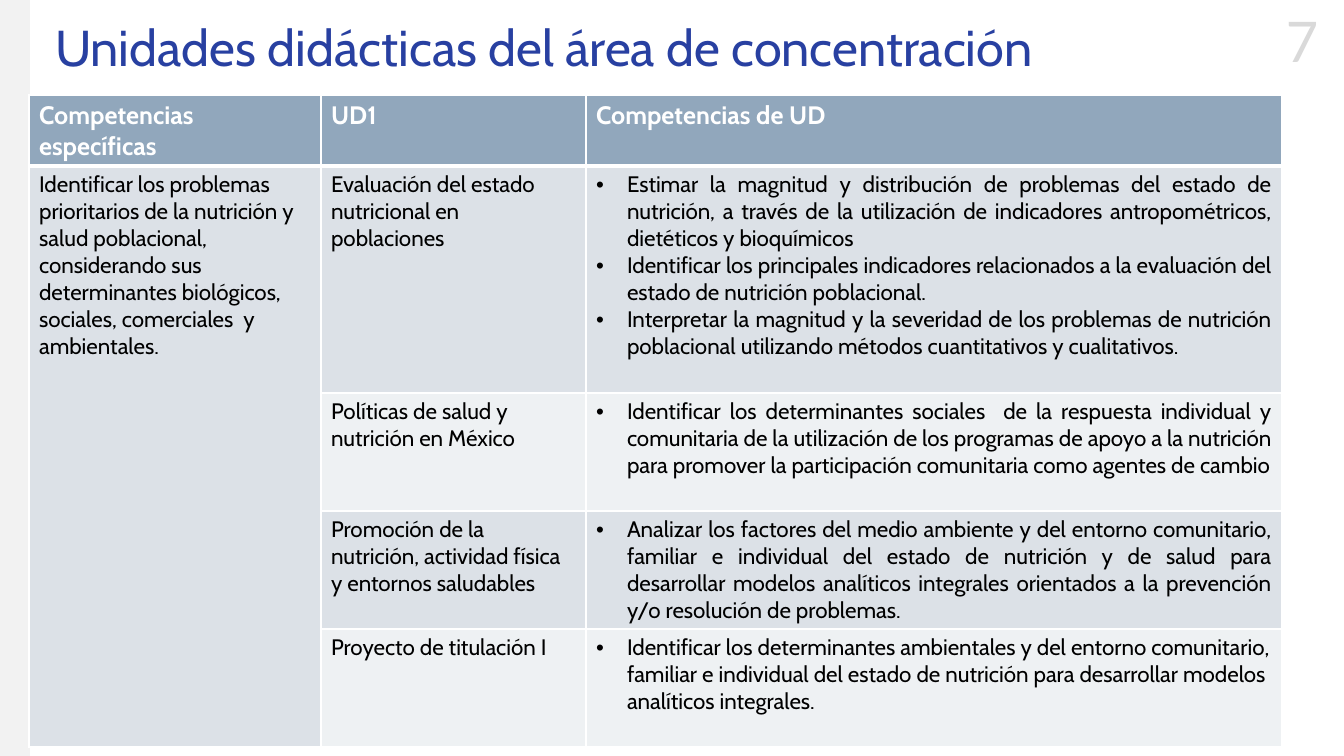
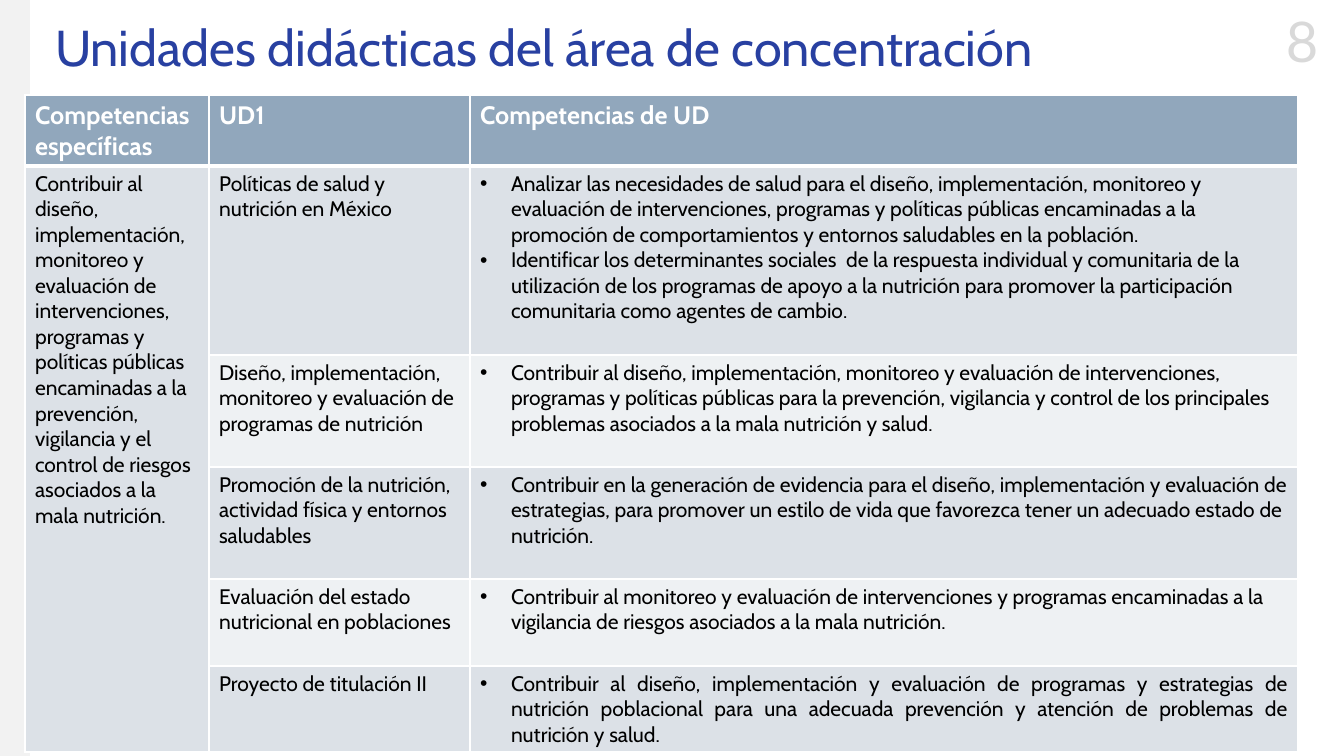
from lxml import etree
from pptx import Presentation
from pptx import util as u
from pptx.dml.color import RGBColor
from pptx.enum import shapes, text
from pptx.oxml.ns import qn

EMU_PER_PX = 12192000 / 1344
SLIDE_W, SLIDE_H = 1344, 756
COLORS = {
    "title": "2840A1", "number": "D9D9D9", "band": "F2F2F2",
    "header": "91A7BC", "odd": "DCE1E7", "even": "EEF1F3",
    "white": "FFFFFF", "ink": "000000",
}
TITLE = "Unidades didácticas del área de concentración"
HEADINGS = ["Competencias específicas", "UD1", "Competencias de UD"]
HEADER_H = 71
BULLET_INDENT = 31

# Each unit: row height, name, competencies, justified
UNIT_SLIDES = [
    dict(
        number=7, left=29, top=95, columns=[292, 265, 696], size=16,
        competence="Identificar los problemas prioritarios de la nutrición y salud "
                   "poblacional, considerando sus determinantes biológicos, sociales, "
                   "comerciales  y ambientales.",
        units=[
            (227, "Evaluación del estado nutricional en poblaciones", [
                "Estimar la magnitud y distribución de problemas del estado de nutrición, a "
                "través de la utilización de indicadores antropométricos, dietéticos y "
                "bioquímicos",
                "Identificar los principales indicadores relacionados a la evaluación del "
                "estado de nutrición poblacional.",
                "Interpretar la magnitud y la severidad de los problemas de nutrición "
                "poblacional utilizando métodos cuantitativos y cualitativos.",
            ], True),
            (118, "Políticas de salud y nutrición en México", [
                "Identificar los determinantes sociales  de la respuesta individual y "
                "comunitaria de la utilización de los programas de apoyo a la nutrición para "
                "promover la participación comunitaria como agentes de cambio",
            ], True),
            (118, "Promoción de la nutrición, actividad física y entornos saludables", [
                "Analizar los factores del medio ambiente y del entorno comunitario, familiar "
                "e individual del estado de nutrición y de salud para desarrollar modelos "
                "analíticos integrales orientados a la prevención y/o resolución de problemas.",
            ], True),
            (118, "Proyecto de titulación I", [
                "Identificar los determinantes ambientales y del entorno comunitario, familiar "
                "e individual del estado de nutrición para desarrollar modelos analíticos "
                "integrales.",
            ], False),
        ],
    ),
    dict(
        number=8, left=25, top=95, columns=[184, 261, 828], size=15,
        competence="Contribuir al diseño, implementación, monitoreo y evaluación de "
                   "intervenciones, programas y políticas públicas encaminadas a la "
                   "prevención, vigilancia y el control de riesgos asociados a la mala "
                   "nutrición.",
        units=[
            (189, "Políticas de salud y nutrición en México", [
                "Analizar las necesidades de salud para el diseño, implementación, monitoreo y "
                "evaluación de intervenciones, programas y políticas públicas encaminadas a la "
                "promoción de comportamientos y entornos saludables en la población.",
                "Identificar los determinantes sociales  de la respuesta individual y "
                "comunitaria de la utilización de los programas de apoyo a la nutrición para "
                "promover la participación comunitaria como agentes de cambio.",
            ], False),
            (112, "Diseño, implementación, monitoreo y evaluación de programas de nutrición", [
                "Contribuir al diseño, implementación, monitoreo y evaluación de "
                "intervenciones, programas y políticas públicas para la prevención, vigilancia "
                "y control de los principales problemas asociados a la mala nutrición y salud.",
            ], False),
            (112, "Promoción de la nutrición, actividad física y entornos saludables", [
                "Contribuir en la generación de evidencia para el diseño, implementación y "
                "evaluación de estrategias, para promover un estilo de vida que favorezca tener "
                "un adecuado estado de nutrición.",
            ], False),
            (87, "Evaluación del estado nutricional en poblaciones", [
                "Contribuir al monitoreo y evaluación de intervenciones y programas encaminadas "
                "a la vigilancia de riesgos asociados a la mala nutrición.",
            ], False),
            (86, "Proyecto de titulación II", [
                "Contribuir al diseño, implementación y evaluación de programas y estrategias "
                "de nutrición poblacional para una adecuada prevención y atención de problemas "
                "de nutrición y salud.",
            ], True),
        ],
    ),
]


def px(length):
    return u.Emu(round(length * EMU_PER_PX))


def rgb(name):
    return RGBColor.from_string(COLORS[name])


def write(frame, *lines, size, color="ink", font="Cabin", bold=False,
          align=text.PP_ALIGN.LEFT, spacing=None, bullets=False):
    """Fill a text frame with one formatted paragraph per line."""
    for i, line in enumerate(lines):
        paragraph = frame.add_paragraph() if i else frame.paragraphs[0]
        if bullets:
            props = paragraph._p.get_or_add_pPr()
            props.set("marL", str(px(BULLET_INDENT)))
            props.set("indent", str(-px(BULLET_INDENT)))
            etree.SubElement(props, qn("a:buFont")).set("typeface", "Arial")
            etree.SubElement(props, qn("a:buChar")).set("char", "•")
        paragraph.alignment = align
        if spacing:
            paragraph.line_spacing = spacing
        run = paragraph.add_run()
        run.text = line
        run.font.size, run.font.name, run.font.bold = u.Pt(size), font, bold
        run.font.color.rgb = rgb(color)


def style_cell(cell, fill, top=1, bottom=1):
    """Set the fill and the white borders, whose widths are in points."""
    props = cell._tc.get_or_add_tcPr()
    for i, (side, width) in enumerate(zip("LRTB", (1, 1, top, bottom))):
        border = etree.Element(qn(f"a:ln{side}"), w=str(u.Pt(width)))
        paint = etree.SubElement(border, qn("a:solidFill"))
        etree.SubElement(paint, qn("a:srgbClr")).set("val", COLORS["white"])
        props.insert(i, border)
    cell.fill.solid()
    cell.fill.fore_color.rgb = rgb(fill)


def add_frame(slide, number):
    """Side band, page number and title shared by all slides."""
    band = slide.shapes.add_shape(shapes.MSO_SHAPE.RECTANGLE, 0, 0, px(30), px(SLIDE_H))
    band.shadow.inherit = False
    band.fill.solid()
    band.fill.fore_color.rgb = rgb("band")
    band.line.fill.background()

    page = slide.shapes.add_textbox(px(1264), px(2), px(76), px(78)).text_frame
    page.word_wrap = False
    write(page, str(number), size=40, color="number", font="Lato",
          align=text.PP_ALIGN.CENTER)

    title = slide.shapes.title
    title.left, title.top, title.width, title.height = px(45), px(5), px(1159), px(90)
    title.text_frame.auto_size = text.MSO_AUTO_SIZE.NONE
    title.text_frame.vertical_anchor = text.MSO_ANCHOR.MIDDLE
    write(title.text_frame, TITLE, size=36, color="title", spacing=0.9)


def add_units_table(slide, left, top, columns, size, competence, units):
    """One competence on the left, its units and their competencies beside it."""
    heights = [HEADER_H] + [unit[0] for unit in units]
    table = slide.shapes.add_table(len(heights), len(columns), px(left), px(top),
                                   px(sum(columns)), px(sum(heights))).table
    for column, width in zip(table.columns, columns):
        column.width = px(width)
    for row, height in zip(table.rows, heights):
        row.height = px(height)

    # Header
    for cell, heading in zip(table.rows[0].cells, HEADINGS):
        style_cell(cell, "header", bottom=3)
        write(cell.text_frame, heading, size=18, color="white", bold=True)

    # Units
    for r, (_, unit, competencies, justified) in enumerate(units, start=1):
        for c, cell in enumerate(table.rows[r].cells):
            fill = "odd" if r % 2 or c == 0 else "even"
            style_cell(cell, fill, top=3 if r == 1 else 1)
        write(table.cell(r, 1).text_frame, unit, size=size)
        align = text.PP_ALIGN.JUSTIFY if justified else text.PP_ALIGN.LEFT
        write(table.cell(r, 2).text_frame, *competencies, size=size, align=align,
              bullets=True)

    # Competence spanning all units
    table.cell(1, 0).merge(table.cell(len(units), 0))
    write(table.cell(1, 0).text_frame, competence, size=size)


def main():
    prs = Presentation()
    prs.slide_width, prs.slide_height = px(SLIDE_W), px(SLIDE_H)
    title_only = prs.slide_layouts[5]
    for content in UNIT_SLIDES:
        slide = prs.slides.add_slide(title_only)
        add_frame(slide, content["number"])
        add_units_table(slide, **{k: v for k, v in content.items() if k != "number"})
    prs.save("out.pptx")


if __name__ == "__main__":
    main()
